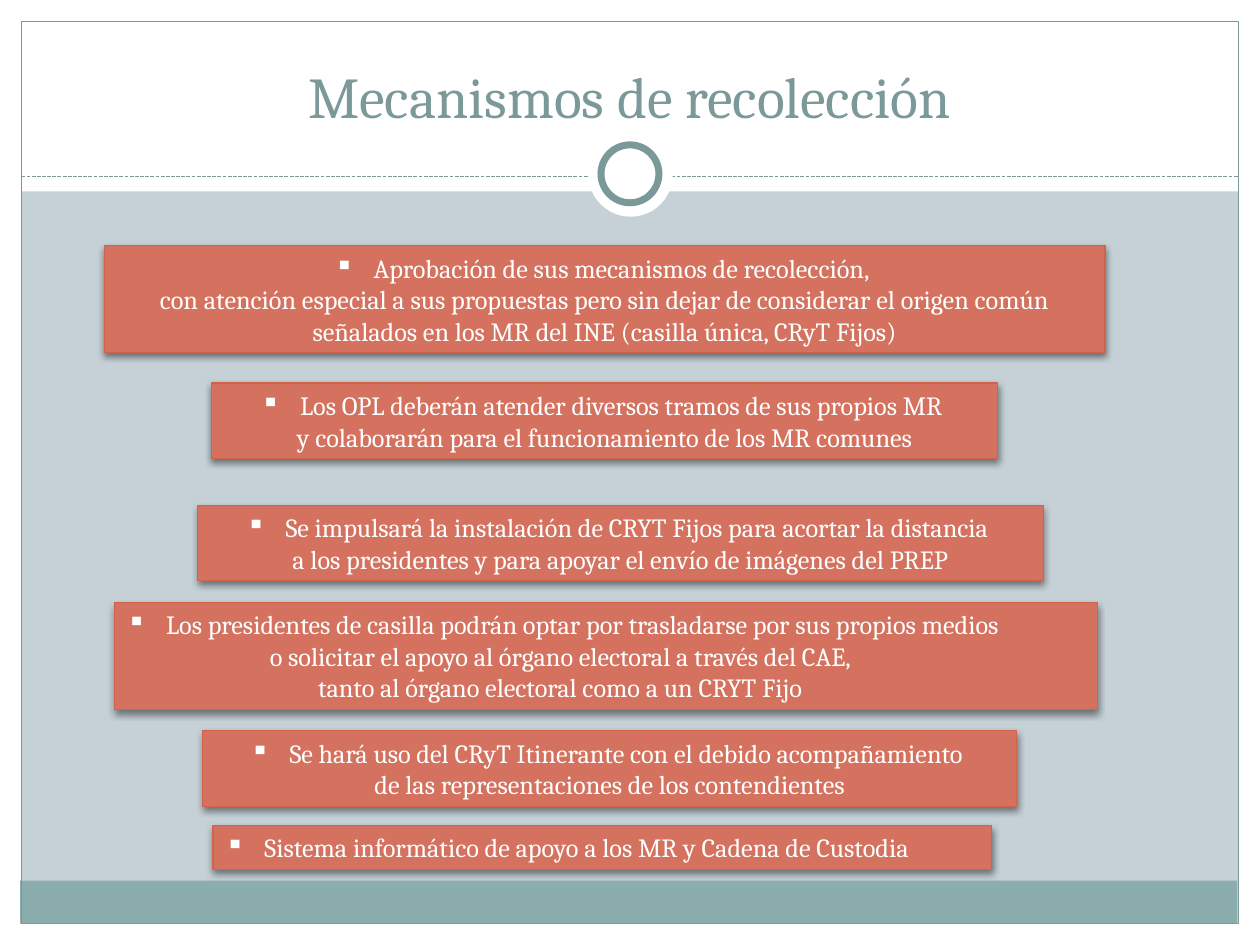
from dataclasses import dataclass

from lxml import etree
from pptx import Presentation
from pptx.dml.color import RGBColor
from pptx.enum.dml import MSO_LINE
from pptx.enum.shapes import MSO_CONNECTOR, MSO_SHAPE
from pptx.enum.text import MSO_ANCHOR, MSO_AUTO_SIZE, PP_ALIGN
from pptx.oxml.ns import qn
from pptx.util import Inches, Pt

RECTANGLE, OVAL = MSO_SHAPE.RECTANGLE, MSO_SHAPE.OVAL
STRAIGHT = MSO_CONNECTOR.STRAIGHT
DASH = MSO_LINE.SQUARE_DOT
LEFT, CENTER = PP_ALIGN.LEFT, PP_ALIGN.CENTER
BOTTOM, MIDDLE = MSO_ANCHOR.BOTTOM, MSO_ANCHOR.MIDDLE
NO_FIT, GROW = MSO_AUTO_SIZE.NONE, MSO_AUTO_SIZE.SHAPE_TO_FIT_TEXT

FONT = "Cambria"
COLORS = {
    "backdrop": "C5D1D7",
    "white": "FFFFFF",
    "band": "8CADAE",
    "accent": "7C999A",
    "box": "D4725F",
    "box_edge": "D16349",
    "shadow": "000000",
}


@dataclass
class Panel:
    left: float
    top: float
    width: float
    height: float
    fill: str | None = "white"
    line: str | None = None
    weight: float = 0.75
    kind: MSO_SHAPE = RECTANGLE


@dataclass
class Mechanism:
    left: float
    top: float
    width: float
    lines: list[str]
    first_align: PP_ALIGN = CENTER

    @property
    def height(self) -> float:
        return 0.1 + 0.25 * len(self.lines)


FRAME = [
    Panel(0, 7.33, 10, 0.17),
    Panel(0, 0, 10, 1.52),
    Panel(0, 0, 0.17, 7.5),
    Panel(9.83, 0, 0.17, 7.5),
    Panel(0.16, 6.99, 9.66, 0.34, "band"),
    Panel(0.17, 0.17, 9.66, 7.16, None, "accent"),
]
RING = [
    Panel(4.67, 1.05, 0.67, 0.67, kind=OVAL),
    Panel(4.77, 1.15, 0.46, 0.46, line="accent", weight=4, kind=OVAL),
]
MECHANISMS = [
    Mechanism(0.83, 1.95, 7.94, [
        "Aprobación de sus mecanismos de recolección, ",
        "con atención especial a sus propuestas pero sin dejar de considerar el origen común",
        "señalados en los MR del INE (casilla única, CRyT Fijos)",
    ]),
    Mechanism(1.68, 3.04, 6.24, [
        "Los OPL deberán atender diversos tramos de sus propios MR ",
        "y colaborarán para el funcionamiento de los MR comunes",
    ]),
    Mechanism(1.57, 4.01, 6.71, [
        "Se impulsará la instalación de CRYT Fijos para acortar la distancia ",
        "a los presidentes y para apoyar el envío de imágenes del PREP",
    ]),
    Mechanism(0.91, 4.78, 7.8, [
        "Los presidentes de casilla podrán optar por trasladarse por sus propios medios",
        "o solicitar el apoyo al órgano electoral a través del CAE, ",
        "tanto al órgano electoral como a un CRYT Fijo ",
    ], LEFT),
    Mechanism(1.61, 5.8, 6.46, [
        "Se hará uso del CRyT Itinerante con el debido acompañamiento ",
        "de las representaciones de los contendientes",
    ]),
    Mechanism(1.69, 6.55, 6.18, [
        "Sistema informático de apoyo a los MR y Cadena de Custodia",
    ], LEFT),
]


def color(name: str) -> RGBColor:
    return RGBColor.from_string(COLORS[name])


def place(shape, left: float, top: float, width: float, height: float) -> None:
    shape.left, shape.top = Inches(left), Inches(top)
    shape.width, shape.height = Inches(width), Inches(height)


def style_paragraph(para, size: float, tint: str, align: PP_ALIGN) -> None:
    para.alignment = align
    para.font.name = FONT
    para.font.size = Pt(size)
    para.font.color.rgb = color(tint)


def draw_panel(page, panel: Panel):
    shape = page.shapes.add_shape(
        panel.kind, Inches(panel.left), Inches(panel.top),
        Inches(panel.width), Inches(panel.height))
    shape.shadow.inherit = False
    if panel.fill:
        shape.fill.solid()
        shape.fill.fore_color.rgb = color(panel.fill)
    else:
        shape.fill.background()
    if panel.line:
        shape.line.color.rgb = color(panel.line)
        shape.line.width = Pt(panel.weight)
    else:
        shape.line.fill.background()
    return shape


def draw_divider(page) -> None:
    divider = page.shapes.add_connector(
        STRAIGHT, Inches(0.17), Inches(1.4), Inches(9.83), Inches(1.4))
    divider.line.color.rgb = color("accent")
    divider.line.width = Pt(0.75)
    divider.line.dash_style = DASH
    etree.SubElement(divider._element.spPr, qn("a:effectLst"))


def add_shadow(shape) -> None:
    effects = shape._element.spPr.find(qn("a:effectLst"))
    shadow = etree.SubElement(
        effects, qn("a:outerShdw"), blurRad=str(Pt(4)), dist=str(Pt(2)),
        dir="5400000", rotWithShape="0")
    tint = etree.SubElement(shadow, qn("a:srgbClr"), val=COLORS["shadow"])
    etree.SubElement(tint, qn("a:alpha"), val="45000")


def add_bullet(para) -> None:
    properties = para._p.get_or_add_pPr()
    properties.set("marL", str(Inches(0.31)))
    properties.set("indent", str(-Inches(0.31)))
    bullet = etree.Element(qn("a:buChar"), char="▪")
    properties.insert(0, bullet)


def draw_mechanism(page, item: Mechanism) -> None:
    box = draw_panel(page, Panel(
        item.left, item.top, item.width, item.height, "box", "box_edge"))
    add_shadow(box)
    frame = box.text_frame
    frame.text = "\n".join(item.lines)
    frame.word_wrap = False
    frame.auto_size = GROW
    frame.vertical_anchor = MIDDLE
    for index, para in enumerate(frame.paragraphs):
        style_paragraph(para, 15, "white", CENTER if index else item.first_align)
    add_bullet(frame.paragraphs[0])


def write_title(page) -> None:
    title = page.shapes.title
    place(title, 0.33, 0.25, 9.33, 0.83)
    title.text_frame.text = "Mecanismos de recolección"
    title.text_frame.auto_size = NO_FIT
    title.text_frame.vertical_anchor = BOTTOM
    style_paragraph(title.text_frame.paragraphs[0], 33, "accent", CENTER)
    page.shapes._spTree.append(title._element)


def main() -> None:
    deck = Presentation()
    deck.slide_width, deck.slide_height = Inches(10), Inches(7.5)
    page = deck.slides.add_slide(deck.slide_layouts[5])
    page.background.fill.solid()
    page.background.fill.fore_color.rgb = color("backdrop")
    for panel in FRAME:
        draw_panel(page, panel)
    draw_divider(page)
    for panel in RING:
        draw_panel(page, panel)
    for item in MECHANISMS:
        draw_mechanism(page, item)
    write_title(page)
    deck.save("out.pptx")


if __name__ == "__main__":
    main()
